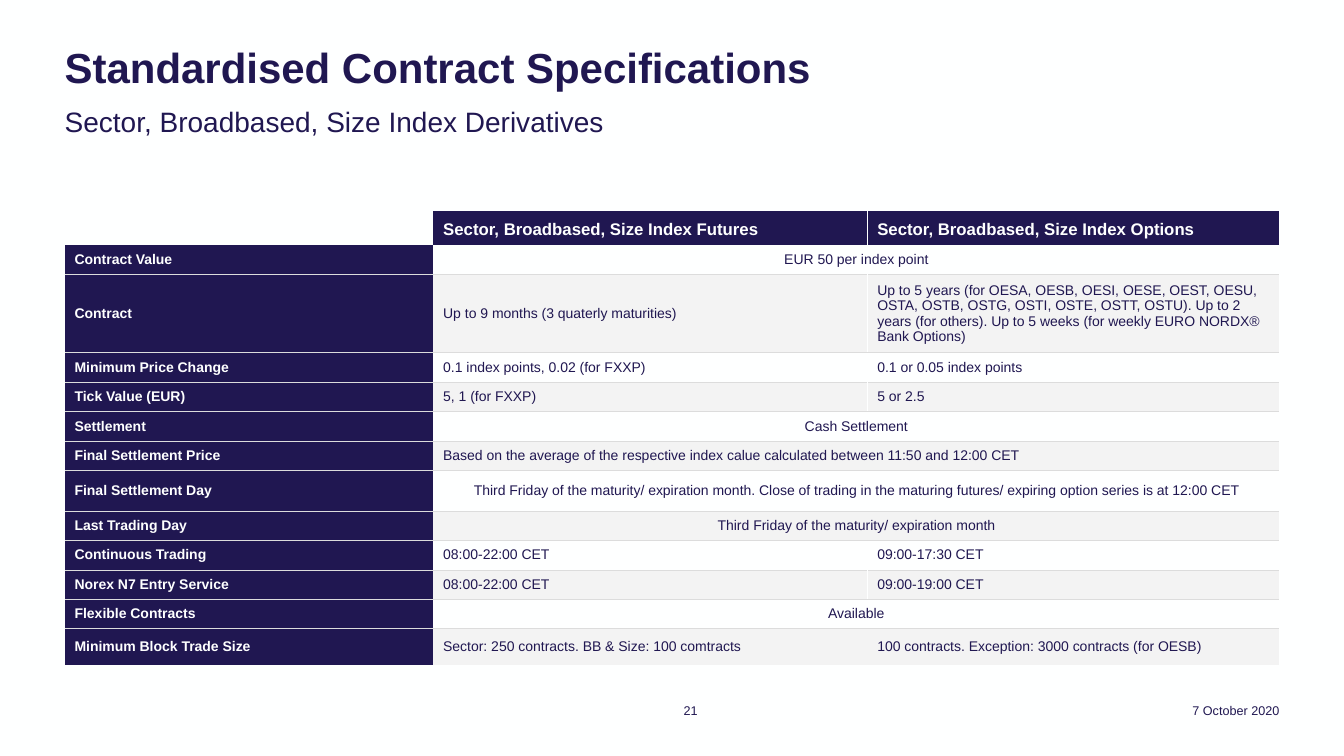
"""Build the contract specifications slide with its table and footer."""
from dataclasses import dataclass

from lxml.etree import SubElement
from pptx import Presentation
from pptx.dml.color import RGBColor
from pptx.enum.text import MSO_ANCHOR, PP_ALIGN
from pptx.oxml.ns import qn
from pptx.util import Cm, Pt

TITLE = "Standardised Contract Specifications"
SUBTITLE = "Sector, Broadbased, Size Index Derivatives"
PAGE_NUMBER = "21"
DATE = "7 October 2020"

LEFT, CENTER, RIGHT = PP_ALIGN.LEFT, PP_ALIGN.CENTER, PP_ALIGN.RIGHT
HEADER = ("", "Sector, Broadbased, Size Index Futures", "Sector, Broadbased, Size Index Options")
ROWS = [
    ("Contract Value", "EUR 50 per index point"),
    ("Contract", "Up to 9 months (3 quaterly maturities)",
     "Up to 5 years (for OESA, OESB, OESI, OESE, OEST, OESU, OSTA, OSTB, OSTG, OSTI, OSTE, "
     "OSTT, OSTU). Up to 2 years (for others). Up to 5 weeks (for weekly EURO NORDX® Bank Options)"),
    ("Minimum Price Change", "0.1 index points, 0.02 (for FXXP)", "0.1 or 0.05 index points"),
    ("Tick Value (EUR)", "5, 1 (for FXXP)", "5 or 2.5"),
    ("Settlement", "Cash Settlement"),
    ("Final Settlement Price",
     "Based on the average of the respective index calue calculated between 11:50 and 12:00 CET"),
    ("Final Settlement Day",
     "Third Friday of the maturity/ expiration month. Close of trading in the maturing futures/ "
     "expiring option series is at 12:00 CET"),
    ("Last Trading Day", "Third Friday of the maturity/ expiration month"),
    ("Continuous Trading", "08:00-22:00 CET", "09:00-17:30 CET"),
    ("Norex N7 Entry Service", "08:00-22:00 CET", "09:00-19:00 CET"),
    ("Flexible Contracts", "Available"),
    ("Minimum Block Trade Size", "Sector: 250 contracts. BB & Size: 100 comtracts",
     "100 contracts. Exception: 3000 contracts (for OESB)"),
]
LEFT_ALIGNED_SPANS = {"Final Settlement Price"}
COLUMN_WIDTHS = (9.29, 10.94, 10.38)
HEADER_HEIGHT, ROW_HEIGHT = 0.86, 0.74
TALL_ROWS = {"Contract": 1.97, "Final Settlement Day": 1.03, "Minimum Block Trade Size": 0.92}
MARGIN_LEFT, CONTENT_WIDTH = 1.63, sum(COLUMN_WIDTHS)
NO_STYLE_ID = "{2D5ABB26-0587-4C30-8999-92F81FD0307C}"


@dataclass(frozen=True)
class Theme:
    font: str = "Arial"
    navy: str = "201751"
    white: str = "FEFFFF"
    band: str = "F3F3F3"
    rule: str = "DCDCDC"
    title: int = 30
    subtitle: int = 20
    header: int = 12
    body: int = 10
    footer: int = 9


THEME = Theme()


def style_font(font, size, color, bold=False):
    font.name, font.size, font.bold = THEME.font, Pt(size), bold
    font.color.rgb = RGBColor.from_string(color)


def add_text_frame(slide, left, top, width, height, anchor=MSO_ANCHOR.TOP, inset_top=0):
    frame = slide.shapes.add_textbox(Cm(left), Cm(top), Cm(width), Cm(height)).text_frame
    frame.word_wrap, frame.vertical_anchor = True, anchor
    frame.margin_left = frame.margin_right = frame.margin_bottom = 0
    frame.margin_top = Cm(inset_top)
    return frame


def add_title(slide):
    frame = add_text_frame(slide, MARGIN_LEFT, 1.02, CONTENT_WIDTH, 1.3, inset_top=0.13)
    paragraph = frame.paragraphs[0]
    paragraph.line_spacing = Pt(33)
    title = paragraph.add_run()
    title.text = TITLE
    style_font(title.font, THEME.title, THEME.navy, True)
    paragraph.add_line_break()
    subtitle = paragraph.add_run()
    subtitle.text = SUBTITLE
    style_font(subtitle.font, THEME.subtitle, THEME.navy)


def add_footer(slide, text, left, width, alignment):
    frame = add_text_frame(slide, left, 17.67, width, 0.43, MSO_ANCHOR.BOTTOM)
    paragraph = frame.paragraphs[0]
    paragraph.text, paragraph.alignment, paragraph.line_spacing = text, alignment, 1.1
    style_font(paragraph.font, THEME.footer, THEME.navy)


def fill_cell(cell, text, size, color, bold, fill, alignment=LEFT, spacing=1.0):
    cell.margin_left = cell.margin_right = Cm(0.25)
    cell.margin_top = cell.margin_bottom = Cm(0.12)
    cell.vertical_anchor = MSO_ANCHOR.MIDDLE
    if fill:
        cell.fill.solid()
        cell.fill.fore_color.rgb = RGBColor.from_string(fill)
    else:
        cell.fill.background()
    paragraph = cell.text_frame.paragraphs[0]
    paragraph.text, paragraph.alignment, paragraph.line_spacing = text, alignment, spacing
    style_font(paragraph.font, size, color, bold)
    if not text:
        end_properties = SubElement(paragraph._p, qn("a:endParaRPr"))
        end_properties.set("sz", str(size * 100))


def set_borders(cell, borders):
    properties = cell._tc.get_or_add_tcPr()
    sides = [side for side in "LRTB" if side in borders]
    for position, side in enumerate(sides):
        color, width = borders[side]
        line = SubElement(properties, qn(f"a:ln{side}"), w=str(Pt(width)))
        SubElement(SubElement(line, qn("a:solidFill")), qn("a:srgbClr"), val=color)
        properties.insert(position, line)


def add_specifications(slide):
    heights = [HEADER_HEIGHT] + [TALL_ROWS.get(row[0], ROW_HEIGHT) for row in ROWS]
    frame = slide.shapes.add_table(len(heights), len(COLUMN_WIDTHS), Cm(MARGIN_LEFT), Cm(5.32),
                                   Cm(CONTENT_WIDTH), Cm(sum(heights)))
    table = frame.table
    table.first_row = table.horz_banding = False
    frame._element.find(".//" + qn("a:tableStyleId")).text = NO_STYLE_ID
    for column, width in zip(table.columns, COLUMN_WIDTHS):
        column.width = Cm(width)
    for row, height in zip(table.rows, heights):
        row.height = Cm(height)

    divider, rule = (THEME.white, 1), (THEME.rule, 0.5)
    for column, text in enumerate(HEADER):
        cell = table.cell(0, column)
        fill = THEME.navy if text else None
        fill_cell(cell, text, THEME.header, THEME.white, True, fill, spacing=1.1)
        if column:
            set_borders(cell, {"R" if column == 1 else "L": divider})

    for number, (label, *values) in enumerate(ROWS, 1):
        last = number == len(ROWS)
        merged = len(values) == 1
        band = THEME.band if number % 2 == 0 else None
        alignment = CENTER if merged and label not in LEFT_ALIGNED_SPANS else LEFT
        fill_cell(table.cell(number, 0), label, THEME.body, THEME.white, True, THEME.navy)
        for column, value in enumerate((values + [""])[:2], 1):
            fill_cell(table.cell(number, column), value, THEME.body, THEME.navy, False, band, alignment)
        if merged:
            table.cell(number, 1).merge(table.cell(number, 2))
        for column in range(len(COLUMN_WIDTHS)):
            borders = {}
            if number > 1:
                borders["T"] = rule
            if not last:
                borders["B"] = rule
            if column and band and not merged and not last:
                borders["R" if column == 1 else "L"] = divider
            set_borders(table.cell(number, column), borders)


def main():
    presentation = Presentation()
    presentation.slide_width, presentation.slide_height = Cm(33.87), Cm(19.05)
    slide = presentation.slides.add_slide(presentation.slide_layouts[6])
    slide.background.fill.solid()
    slide.background.fill.fore_color.rgb = RGBColor.from_string(THEME.white)
    add_footer(slide, DATE, 28.43, 3.81, RIGHT)
    add_footer(slide, PAGE_NUMBER, 17.23, 2.41, LEFT)
    add_title(slide)
    add_specifications(slide)
    presentation.save("out.pptx")


if __name__ == "__main__":
    main()
